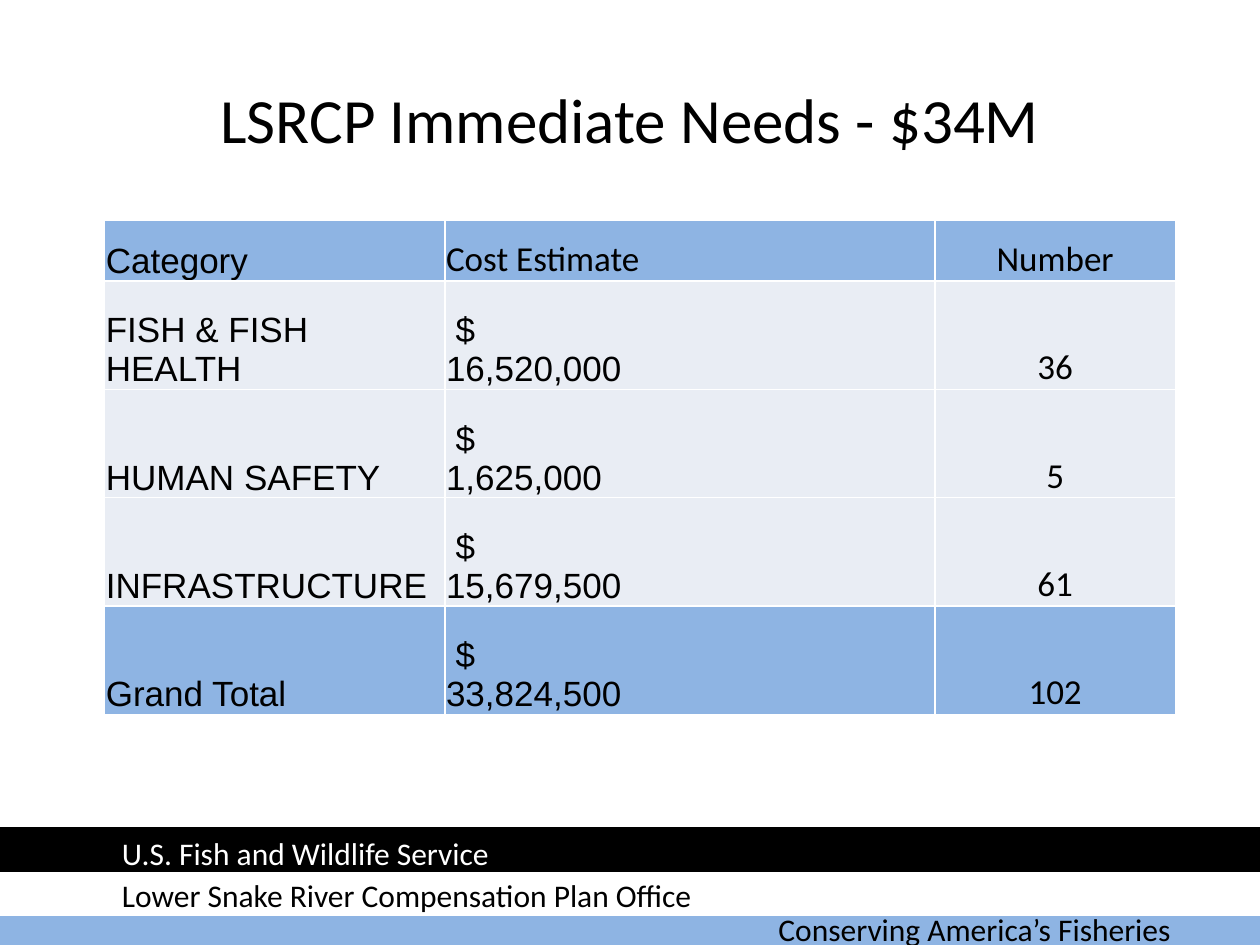
from lxml import etree
from pptx import Presentation
from pptx.dml.color import RGBColor
from pptx.enum.shapes import MSO_SHAPE
from pptx.enum.text import MSO_ANCHOR, PP_ALIGN
from pptx.oxml.ns import qn
from pptx.util import Inches, Pt

RECTANGLE = MSO_SHAPE.RECTANGLE
MIDDLE, BOTTOM = MSO_ANCHOR.MIDDLE, MSO_ANCHOR.BOTTOM
LEFT, CENTER = PP_ALIGN.LEFT, PP_ALIGN.CENTER

COLORS = {"blue": "8EB4E3", "pale": "E9EDF4", "white": "FFFFFF", "black": "000000"}
TITLE_ONLY = 5
BODY_FONT, TABLE_FONT = "Calibri", "Arial"

HEADER = ("Category", "Cost Estimate", "Number")
NEEDS = [
    ("FISH & FISH HEALTH", "16,520,000", "36"),
    ("HUMAN SAFETY", "1,625,000", "5"),
    ("INFRASTRUCTURE", "15,679,500", "61"),
    ("Grand Total", "33,824,500", "102"),
]
COLUMN_WIDTHS = (2.7, 3.89, 1.91)
HEADER_HEIGHT, ROW_HEIGHT = 0.48, 0.86


def color(name):
    return RGBColor.from_string(COLORS[name])


def style(paragraph, size, font_name=BODY_FONT, color_name="black", alignment=LEFT):
    paragraph.alignment = alignment
    paragraph.font.size = Pt(size)
    paragraph.font.name = font_name
    paragraph.font.color.rgb = color(color_name)


def add_band(slide, left, top, width, height, color_name):
    band = slide.shapes.add_shape(
        RECTANGLE, Inches(left), Inches(top), Inches(width), Inches(height))
    band.shadow.inherit = False
    band.fill.solid()
    band.fill.fore_color.rgb = color(color_name)
    band.line.color.rgb = color(color_name)
    band.line.width = Pt(2)


def add_label(slide, left, top, width, text, color_name):
    label = slide.shapes.add_textbox(
        Inches(left), Inches(top), Inches(width), Inches(0.4))
    label.text_frame.word_wrap = True
    label.text_frame.text = text
    style(label.text_frame.paragraphs[0], 18, color_name=color_name)


def add_footer(slide, left, top, width):
    """Three stacked bands with the agency lines over them."""
    for offset_x, offset_y, name in ((-0.01, 0.59, "blue"), (0, 0.35, "white"),
                                     (0, 0, "black")):
        add_band(slide, left + offset_x, top + offset_y, width, 0.33, name)
    add_label(slide, left + 6.08, top + 0.59, 3.67,
              "Conserving America’s Fisheries", "black")
    add_label(slide, left + 0.87, top - 0.01, 4.16,
              "U.S. Fish and Wildlife Service", "white")
    add_label(slide, left + 0.87, top + 0.32, 4.97,
              "Lower Snake River Compensation Plan Office", "black")


def set_title(slide, left, top, width, height, text):
    title = slide.shapes.title
    title.left, title.top = Inches(left), Inches(top)
    title.width, title.height = Inches(width), Inches(height)
    title.text_frame.text = text
    title.text_frame.vertical_anchor = MIDDLE
    style(title.text_frame.paragraphs[0], 36, alignment=CENTER)


def add_borders(cell):
    properties = cell._tc.get_or_add_tcPr()
    for index, side in enumerate(("a:lnL", "a:lnR", "a:lnT", "a:lnB")):
        border = etree.Element(qn(side), w=str(Pt(1)))
        fill = etree.SubElement(border, qn("a:solidFill"))
        etree.SubElement(fill, qn("a:srgbClr"), val=COLORS["white"])
        properties.insert(index, border)


def fill_cell(cell, text, fill_name, font_name, alignment):
    cell.text = text
    cell.vertical_anchor = BOTTOM
    cell.margin_left = cell.margin_right = cell.margin_top = Inches(0.01)
    cell.margin_bottom = 0
    cell.fill.solid()
    cell.fill.fore_color.rgb = color(fill_name)
    add_borders(cell)
    style(cell.text_frame.paragraphs[0], 20, font_name, alignment=alignment)


def add_needs_table(slide, left, top):
    # The dollar sign sits on its own line above each amount
    rows = [HEADER] + [(category, f" $\v{cost}", number)
                       for category, cost, number in NEEDS]
    height = HEADER_HEIGHT + ROW_HEIGHT * len(NEEDS)
    table = slide.shapes.add_table(
        len(rows), len(HEADER), Inches(left), Inches(top),
        Inches(sum(COLUMN_WIDTHS)), Inches(height)).table
    for column, width in zip(table.columns, COLUMN_WIDTHS):
        column.width = Inches(width)
    for row_index, values in enumerate(rows):
        is_header = row_index == 0
        is_total = row_index == len(rows) - 1
        table.rows[row_index].height = Inches(HEADER_HEIGHT if is_header else ROW_HEIGHT)
        fill_name = "blue" if is_header or is_total else "pale"
        cost_font = BODY_FONT if is_header else TABLE_FONT
        fonts = (TABLE_FONT, cost_font, BODY_FONT)
        for column_index, text in enumerate(values):
            fill_cell(table.cell(row_index, column_index), text, fill_name,
                      fonts[column_index], CENTER if column_index == 2 else LEFT)


def main():
    presentation = Presentation()
    presentation.slide_width, presentation.slide_height = Inches(10), Inches(7.5)
    slide = presentation.slides.add_slide(presentation.slide_layouts[TITLE_ONLY])
    add_footer(slide, 0, 6.58, 10)
    set_title(slide, 0.5, 0.5, 9, 0.87, "LSRCP Immediate Needs - $34M")
    add_needs_table(slide, 0.83, 1.75)
    presentation.save("out.pptx")


if __name__ == "__main__":
    main()
